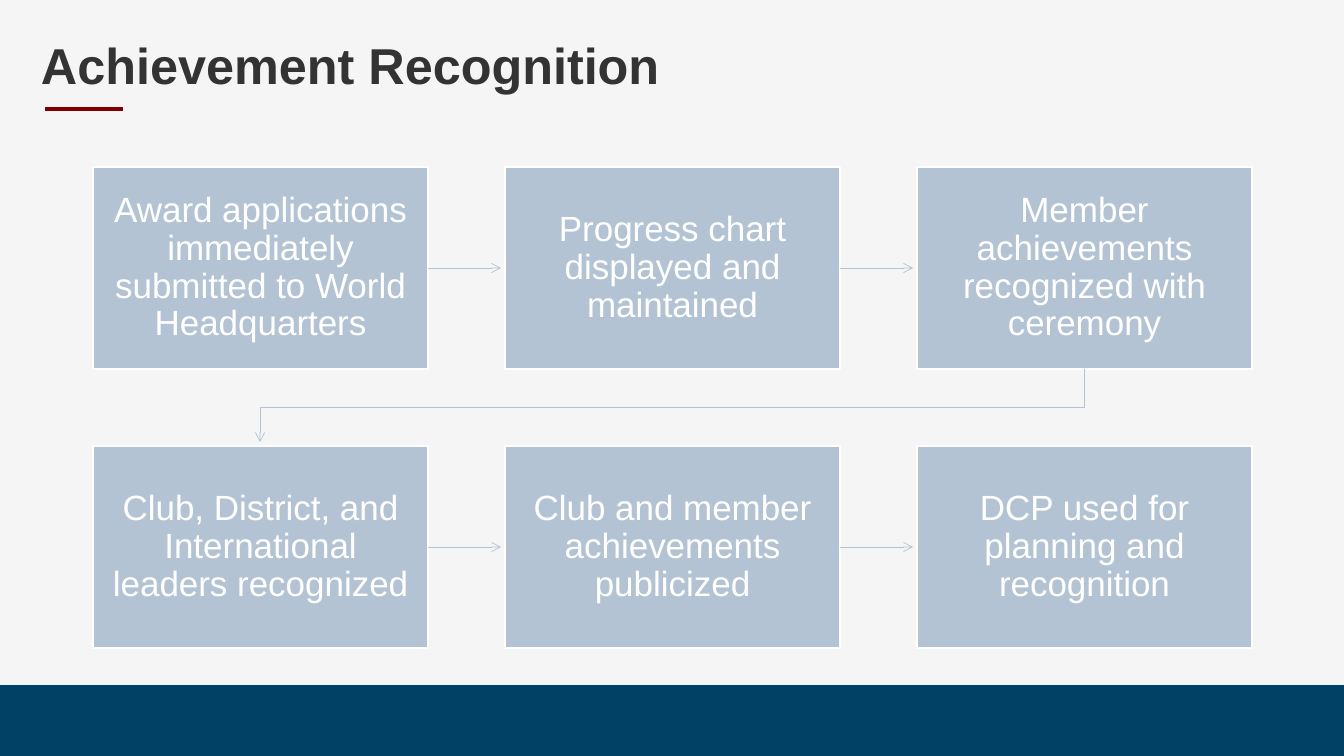
from lxml import etree
from pptx import Presentation
from pptx import util as u
from pptx.dml.color import RGBColor
from pptx.enum import shapes, text
from pptx.oxml.ns import qn

COLORS = {
    "background": "F5F5F5",
    "footer": "004165",
    "accent": "800000",
    "title": "333333",
    "step": "B3C3D3",
    "white": "FFFFFF",
}
FONT = "Arial"
PX_PER_INCH = 100.8
SLIDE_W, SLIDE_H = 1344, 756

STEPS = [
    ["Award applications immediately submitted to World Headquarters",
     "Progress chart displayed and maintained",
     "Member achievements recognized with ceremony"],
    ["Club, District, and International leaders recognized",
     "Club and member achievements publicized",
     "DCP used for planning and recognition"],
]
STEP_LEFT, STEP_TOP = 93, 167
STEP_W, STEP_H = 335, 202
PITCH_X, PITCH_Y = 412, 279
ARROW_GAP = 4


def px(length):
    return round(length * u.Inches(1) / PX_PER_INCH)


def rgb(name):
    return RGBColor.from_string(COLORS[name])


class FlowSlide:
    def __init__(self, deck):
        self.slide = deck.slides.add_slide(deck.slide_layouts[6])
        self.shapes = self.slide.shapes
        fill = self.slide.background.fill
        fill.solid()
        fill.fore_color.rgb = rgb("background")

    def label(self, shape, words, size, color, align, bold=False):
        frame = shape.text_frame
        frame.text = words
        frame.word_wrap = True
        frame.vertical_anchor = text.MSO_ANCHOR.MIDDLE
        paragraph = frame.paragraphs[0]
        paragraph.alignment = align
        paragraph.line_spacing = 0.9
        font = paragraph.runs[0].font
        font.name, font.size, font.bold = FONT, u.Pt(size), bold
        font.color.rgb = rgb(color)
        return frame

    def title(self, words, left, top, width, height):
        box = self.shapes.add_textbox(px(left), px(top), px(width), px(height))
        self.label(box, words, 36, "title", text.PP_ALIGN.LEFT, bold=True)

    def rectangle(self, left, top, width, height, color, outline=None):
        box = self.shapes.add_shape(shapes.MSO_SHAPE.RECTANGLE,
                                    px(left), px(top), px(width), px(height))
        box.shadow.inherit = False
        box.fill.solid()
        box.fill.fore_color.rgb = rgb(color)
        if outline:
            box.line.color.rgb = rgb(outline)
            box.line.width = u.Pt(1)
        else:
            box.line.fill.background()
        return box

    def step(self, words, left, top):
        box = self.rectangle(left, top, STEP_W, STEP_H, "step", "white")
        frame = self.label(box, words, 25, "white", text.PP_ALIGN.CENTER)
        frame.margin_left = frame.margin_right = px(16)
        frame.margin_top = frame.margin_bottom = px(17)
        return box

    def line(self, start, end, color, weight):
        connector = self.shapes.add_connector(
            shapes.MSO_CONNECTOR.STRAIGHT, *map(px, start + end))
        connector.line.color.rgb = rgb(color)
        connector.line.width = u.Pt(weight)
        etree.SubElement(connector.element.spPr, qn("a:effectLst"))
        return connector

    def arrowhead(self, shape):
        outline = shape.element.spPr.find(qn("a:ln"))
        etree.SubElement(outline, qn("a:tailEnd"), type="arrow")

    def arrow(self, source, start, end):
        """Draw a straight arrow from the right side of the source step."""
        connector = self.line(start, end, "step", 0.5)
        connector.begin_connect(source, 3)
        self.arrowhead(connector)

    def bent_arrow(self, points):
        first, *rest = [(px(x), px(y)) for x, y in points]
        builder = self.shapes.build_freeform(*first)
        builder.add_line_segments(rest, close=False)
        route = builder.convert_to_shape()
        route.shadow.inherit = False
        route.fill.background()
        route.line.color.rgb = rgb("step")
        route.line.width = u.Pt(0.5)
        self.arrowhead(route)


def main():
    deck = Presentation()
    deck.slide_width, deck.slide_height = px(SLIDE_W), px(SLIDE_H)
    flow = FlowSlide(deck)

    flow.rectangle(0, 685, SLIDE_W, SLIDE_H - 685, "footer")
    flow.line((45, 109), (123, 109), "accent", 2.25)
    flow.title("Achievement Recognition", 31, 32, 1284, 72)

    for row, labels in enumerate(STEPS):
        top = STEP_TOP + row * PITCH_Y
        middle = top + STEP_H // 2
        for column, words in enumerate(labels):
            left = STEP_LEFT + column * PITCH_X
            step = flow.step(words, left, top)
            if column < len(labels) - 1:
                flow.arrow(step, (left + STEP_W, middle),
                           (left + PITCH_X - ARROW_GAP, middle))

    first_center = STEP_LEFT + STEP_W // 2
    last_center = first_center + 2 * PITCH_X
    row_bottom = STEP_TOP + STEP_H
    next_row = STEP_TOP + PITCH_Y
    turn = (row_bottom + next_row) // 2
    flow.bent_arrow([(last_center, row_bottom), (last_center, turn),
                     (first_center, turn),
                     (first_center, next_row - ARROW_GAP)])

    deck.save("out.pptx")


if __name__ == "__main__":
    main()
